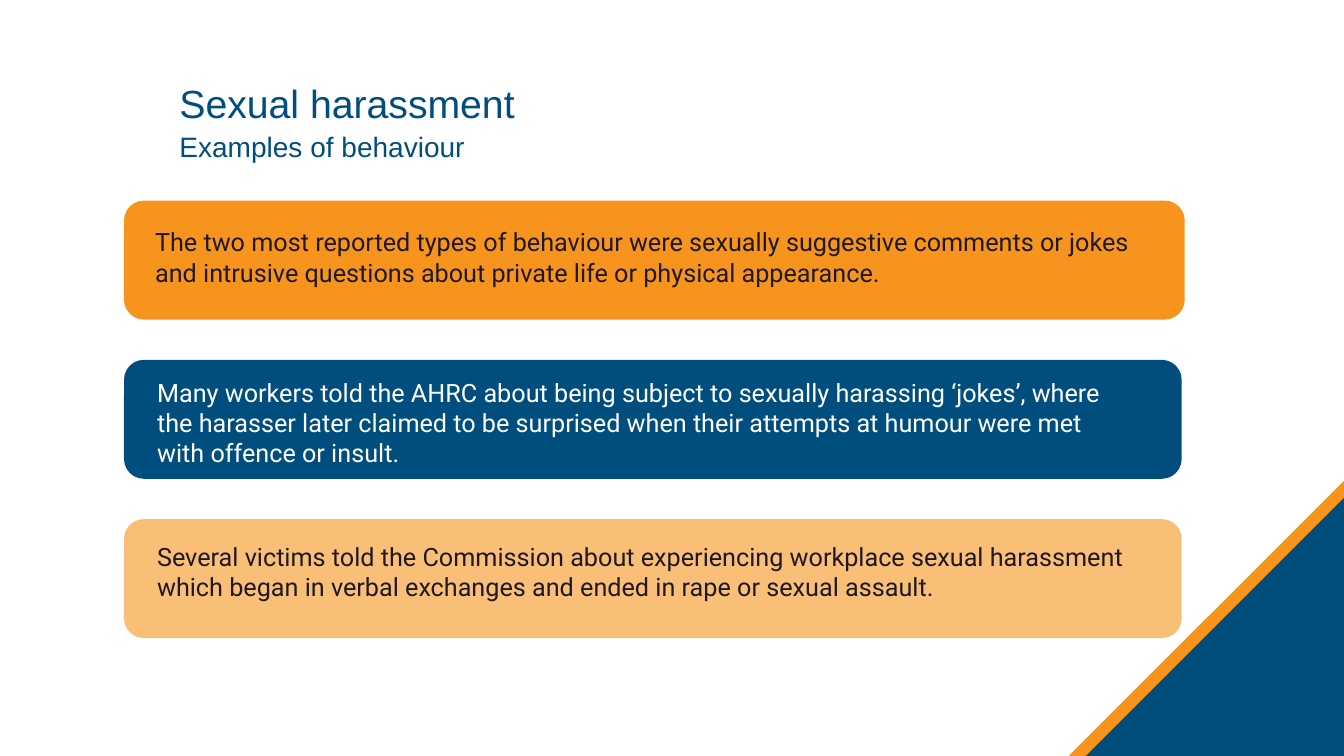
from pptx import Presentation
from pptx.dml.color import RGBColor
from pptx.enum.shapes import MSO_SHAPE
from pptx.enum.text import MSO_ANCHOR, PP_ALIGN
from pptx.util import Inches, Pt

ROUND = MSO_SHAPE.ROUNDED_RECTANGLE
WEDGE = MSO_SHAPE.RIGHT_TRIANGLE
TOP = MSO_ANCHOR.TOP
LEFT = PP_ALIGN.LEFT

THEME = {
    "orange": "F7941D", "blue": "004E7D", "peach": "FABF77",
    "ink": "1F1923", "white": "FFFFFF",
    "title": 28, "sub": 20, "body": 18,
    "head_font": "Arial", "body_font": "Roboto",
}

WIDE, HIGH = 13.33, 7.5
WEDGES = [("orange", 2.73), ("blue", 2.56)]
HEADS = [
    ("Sexual harassment", "title", 0.8, 0.5, 33),
    ("Examples of behaviour", "sub", 1.35, 0.49, 19),
]
CARDS = [
    ("The two most reported types of behaviour were sexually suggestive comments or jokes "
     "and intrusive questions about private life or physical appearance.",
     "orange", "ink", 10.52, (1.44, 2.2, 10.08, 1.05)),
    ("Many workers told the AHRC about being subject to sexually harassing ‘jokes’, where "
     "the harasser later claimed to be surprised when their attempts at humour were met "
     "with offence or insult.",
     "blue", "white", 10.49, (1.46, 3.69, 9.72, 1)),
    ("Several victims told the Commission about experiencing workplace sexual harassment "
     "which began in verbal exchanges and ended in rape or sexual assault.",
     "peach", "ink", 10.49, (1.46, 5.32, 9.96, 0.83)),
]
CARD_X, CARD_Y, CARD_H, PITCH = 1.23, 1.99, 1.18, 1.58
HEAD_X, HEAD_W = 1.78, 9.76


def color(name):
    return RGBColor.from_string(THEME[name])


def assign(obj, vals):
    for key, val in vals.items():
        setattr(obj, key, val)


def add_form(shapes, kind, box, fill):
    form = shapes.add_shape(kind, *map(Inches, box))
    form.shadow.inherit = False
    form.fill.solid()
    form.fill.fore_color.rgb = color(fill)
    form.line.fill.background()
    return form


def add_text(shapes, box, text, size, font, ink, pad=(0.1, 0.05), lead=None):
    frame = shapes.add_textbox(*map(Inches, box)).text_frame
    side, edge = map(Inches, pad)
    assign(frame, {
        "word_wrap": True, "vertical_anchor": TOP,
        "margin_left": side, "margin_right": side,
        "margin_top": edge, "margin_bottom": edge,
    })
    para = frame.paragraphs[0]
    para.alignment = LEFT
    if lead:
        para.line_spacing = Pt(lead)
    run = para.add_run()
    run.text = text
    assign(run.font, {"name": THEME[font], "size": Pt(THEME[size])})
    run.font.color.rgb = color(ink)


def main():
    deck = Presentation()
    assign(deck, {"slide_width": Inches(WIDE), "slide_height": Inches(HIGH)})
    slide = deck.slides.add_slide(deck.slide_layouts[6])
    shapes = slide.shapes

    for fill, side in WEDGES:
        wedge = add_form(shapes, WEDGE, (WIDE - side, HIGH - side, side, side), fill)
        wedge.rotation = 270

    for text, size, top, high, lead in HEADS:
        add_text(shapes, (HEAD_X, top, HEAD_W, high), text, size,
                 "head_font", "blue", (0, 0), lead)

    for row, (text, fill, ink, wide, box) in enumerate(CARDS):
        group = shapes.add_group_shape().shapes
        add_form(group, ROUND, (CARD_X, CARD_Y + row * PITCH, wide, CARD_H), fill)
        add_text(group, box, text, "body", "body_font", ink)

    deck.save("out.pptx")


if __name__ == "__main__":
    main()
